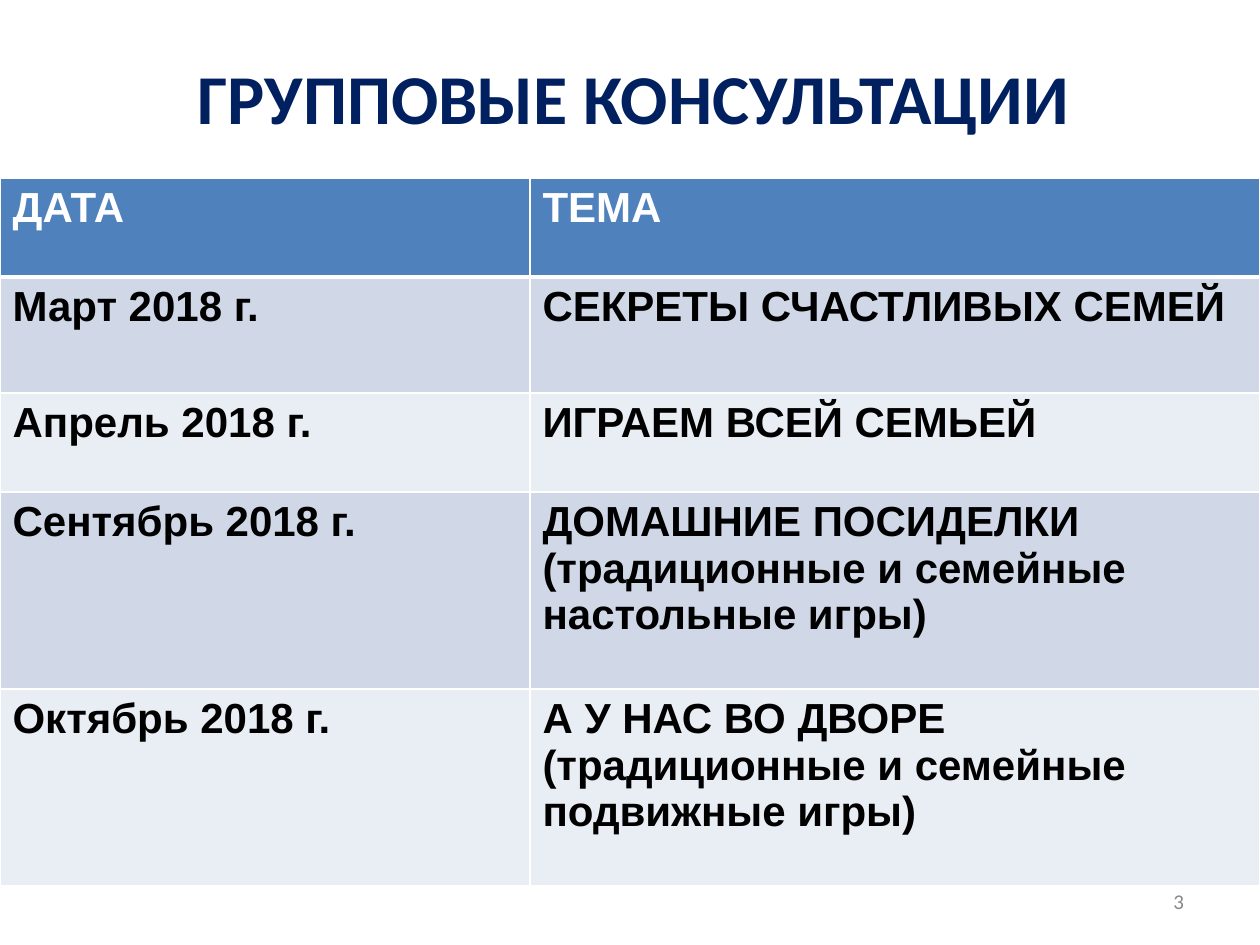
from dataclasses import dataclass

from lxml import etree
from pptx import Presentation
from pptx.dml.color import RGBColor
from pptx.enum import text
from pptx.oxml import ns
from pptx.util import Emu, Pt

PX = 914400 // 126


@dataclass(frozen=True)
class Theme:
    heading_font: str = "Calibri"
    table_font: str = "Arial"
    title_size: int = 40
    table_size: int = 24
    number_size: int = 12
    navy: str = "002060"
    grey: str = "888888"
    white: str = "FFFFFF"
    black: str = "000000"
    header: str = "4F81BD"
    bands: tuple = ("D0D8E8", "E9EDF4")


THEME = Theme()
CONSULTATIONS = [
    ("ДАТА", "ТЕМА"),
    ("Март 2018 г.", "СЕКРЕТЫ СЧАСТЛИВЫХ СЕМЕЙ"),
    ("Апрель 2018 г.", "ИГРАЕМ ВСЕЙ СЕМЬЕЙ"),
    ("Сентябрь 2018 г.",
     "ДОМАШНИЕ ПОСИДЕЛКИ (традиционные и семейные настольные игры)"),
    ("Октябрь 2018 г.",
     "А У НАС ВО ДВОРЕ (традиционные и семейные подвижные игры)"),
]


def px(*lengths):
    return [Emu(length * PX) for length in lengths]


def style(paragraph, font, size, color, bold=False):
    paragraph.font.name = font
    paragraph.font.size = Pt(size)
    paragraph.font.bold = bold
    paragraph.font.color.rgb = RGBColor.from_string(color)


def add_label(slide, box, words, align, anchor, inset, **look):
    frame = slide.shapes.add_textbox(*px(*box)).text_frame
    frame.word_wrap = True
    frame.vertical_anchor = anchor
    frame.margin_left, frame.margin_right = px(13, 13)
    frame.margin_top, frame.margin_bottom = px(inset, inset)
    label = frame.paragraphs[0]
    label.text = words
    label.alignment = align
    style(label, **look)


def add_title(slide, box):
    add_label(slide, box, "ГРУППОВЫЕ КОНСУЛЬТАЦИИ", text.PP_ALIGN.CENTER,
              text.MSO_ANCHOR.TOP, 16, font=THEME.heading_font,
              size=THEME.title_size, color=THEME.navy, bold=True)


def add_page_number(slide, box):
    add_label(slide, box, "3", text.PP_ALIGN.RIGHT, text.MSO_ANCHOR.MIDDLE, 6,
              font=THEME.heading_font, size=THEME.number_size, color=THEME.grey)


def set_borders(cell, top, bottom):
    """Draw white borders; they must come before the fill in the XML."""
    properties = cell._tc.get_or_add_tcPr()
    widths = {"lnL": 1, "lnR": 1, "lnT": top, "lnB": bottom}
    for position, (side, width) in enumerate(widths.items()):
        line = etree.Element(ns.qn(f"a:{side}"), w=str(Pt(width)))
        fill = etree.SubElement(line, ns.qn("a:solidFill"))
        etree.SubElement(fill, ns.qn("a:srgbClr"), val=THEME.white)
        properties.insert(position, line)


def add_schedule(slide, box, date_width, row_heights):
    left, top, width, height = box
    table = slide.shapes.add_table(
        len(CONSULTATIONS), 2, *px(left, top, width, height)).table
    table.columns[0].width, table.columns[1].width = px(
        date_width, width - date_width)
    for row, row_height in zip(table.rows, px(*row_heights)):
        row.height = row_height

    for index, entry in enumerate(CONSULTATIONS):
        is_header = index == 0
        background = THEME.header if is_header else THEME.bands[(index - 1) % 2]
        for column, words in enumerate(entry):
            cell = table.cell(index, column)
            cell.text = words
            style(cell.text_frame.paragraphs[0], THEME.table_font,
                  THEME.table_size, THEME.white if is_header else THEME.black,
                  bold=True)
            cell.fill.solid()
            cell.fill.fore_color.rgb = RGBColor.from_string(background)
            # The rule under the header is heavier than the others
            set_borders(cell, top=3 if index == 1 else 1,
                        bottom=3 if is_header else 1)


def main():
    deck = Presentation()
    deck.slide_width, deck.slide_height = px(1260, 945)
    slide = deck.slides.add_slide(deck.slide_layouts[6])

    # Heading
    add_title(slide, (98, 39, 1071, 188))
    # Page number
    add_page_number(slide, (903, 876, 294, 50))
    # Dates and topics
    add_schedule(slide, (0, 178, 1260, 708), 530, (99, 116, 99, 197, 197))

    deck.save("out.pptx")


if __name__ == "__main__":
    main()
